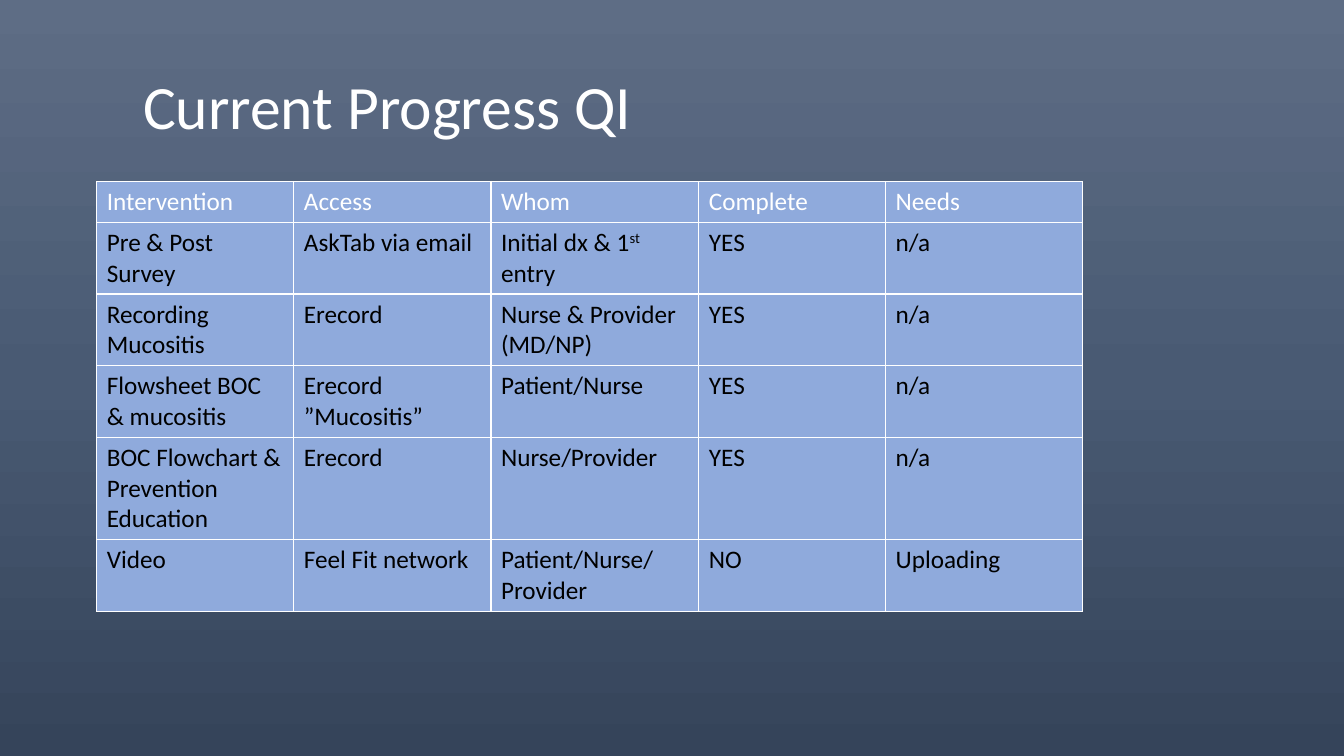
from copy import deepcopy

from lxml.etree import SubElement
from pptx import Presentation
from pptx.dml.color import RGBColor
from pptx.enum.text import MSO_ANCHOR, PP_ALIGN
from pptx.oxml.ns import qn
from pptx.util import Pt

WHITE, BLACK, CELL_BLUE = "FFFFFF", "000000", "8FAADC"


def color(value):
    return RGBColor.from_string(value)


def add_text(paragraph, text, size=18, fill=BLACK, baseline=0):
    run = paragraph.add_run()
    run.text = text
    run.font.name = "Calibri"
    run.font.size = Pt(size)
    run.font.bold = False
    run.font.color.rgb = color(fill)
    if baseline:
        run.font._element.set("baseline", str(baseline * 1000))


presentation = Presentation()
presentation.slide_width, presentation.slide_height = Pt(960), Pt(540)
slide = presentation.slides.add_slide(presentation.slide_layouts[5])

background = slide.background.fill
background.gradient()
background.gradient_angle = 270
stop_list = slide.element.find(".//" + qn("a:gsLst"))
stop_list.append(deepcopy(stop_list[0]))
gradient = [(0, "5E6D85"), (0.5, "495A73"), (1, "35445A")]
for stop, (position, value) in zip(background.gradient_stops, gradient):
    stop.position = position
    stop.color.rgb = color(value)

title = slide.shapes.title
title.left, title.top, title.width, title.height = Pt(95), Pt(27.4), Pt(678), Pt(101.5)
title.text_frame.vertical_anchor = MSO_ANCHOR.MIDDLE
title.text_frame.word_wrap = True
title_paragraph = title.text_frame.paragraphs[0]
title_paragraph.alignment = PP_ALIGN.LEFT
title_paragraph.line_spacing = 0.9
add_text(title_paragraph, "Current Progress QI", size=44, fill=WHITE)

rows = [
    ["Intervention", "Access", "Whom", "Complete", "Needs"],
    ["Pre & Post Survey", "AskTab via email", "Initial dx & 1^st^ entry", "YES", "n/a"],
    ["Recording Mucositis", "Erecord", "Nurse & Provider (MD/NP)", "YES", "n/a"],
    ["Flowsheet BOC & mucositis", "Erecord ”Mucositis”", "Patient/Nurse", "YES", "n/a"],
    ["BOC Flowchart & Prevention Education", "Erecord", "Nurse/Provider", "YES", "n/a"],
    ["Video", "Feel Fit network", "Patient/Nurse/Provider", "NO", "Uploading"],
]
line_counts = [1, 2, 2, 2, 3, 2]
column_widths = [140.8, 140.8, 148.5, 133.4, 140.8]
row_heights = [7.2 + 22 * count for count in line_counts]

table = slide.shapes.add_table(
    len(rows), len(column_widths), Pt(69.1), Pt(129.6),
    Pt(sum(column_widths)), Pt(sum(row_heights)),
).table
table.horz_banding = False
for column, width in zip(table.columns, column_widths):
    column.width = Pt(width)

for row_index, (row, texts) in enumerate(zip(table.rows, rows)):
    row.height = Pt(row_heights[row_index])
    for cell, text in zip(row.cells, texts):
        properties = cell._tc.get_or_add_tcPr()
        for side in ("lnL", "lnR", "lnT", "lnB"):
            border = SubElement(properties, qn(f"a:{side}"), w=str(Pt(1)))
            border_fill = SubElement(border, qn("a:solidFill"))
            SubElement(border_fill, qn("a:srgbClr"), val=WHITE)
        cell.fill.solid()
        cell.fill.fore_color.rgb = color(CELL_BLUE)
        for part_index, part in enumerate(text.split("^")):
            add_text(
                cell.text_frame.paragraphs[0], part,
                fill=BLACK if row_index else WHITE,
                baseline=30 * (part_index % 2),
            )

presentation.save("out.pptx")
